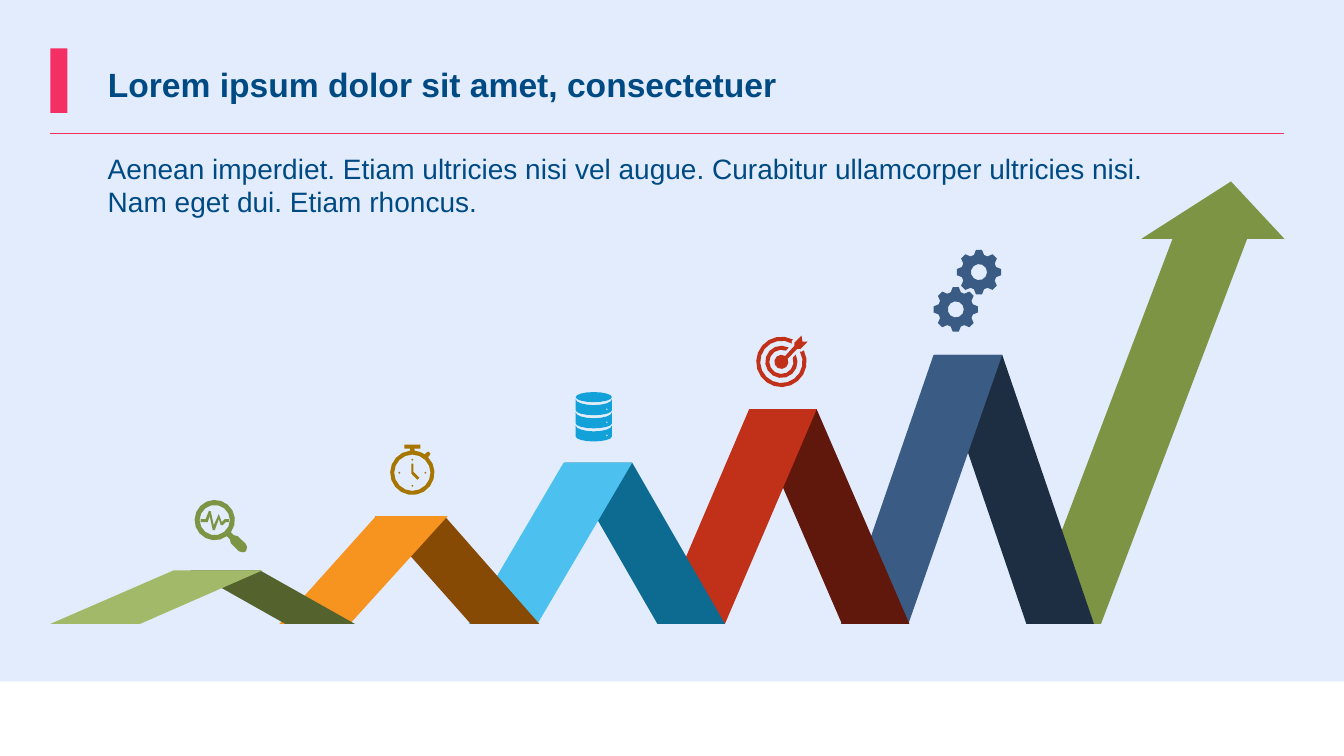
"""Builds a slide with a rising zigzag ribbon, five icons and a final arrow."""
from math import ceil, cos, radians, sin, sqrt

from pptx import Presentation
from pptx.dml.color import RGBColor
from pptx.enum.shapes import MSO_CONNECTOR, MSO_SHAPE
from pptx.enum.text import MSO_ANCHOR, MSO_AUTO_SIZE, PP_ALIGN
from pptx.oxml.xmlchemy import OxmlElement
from pptx.util import Inches, Pt

RECTANGLE = MSO_SHAPE.RECTANGLE
STRAIGHT = MSO_CONNECTOR.STRAIGHT
TOP = MSO_ANCHOR.TOP
GROW = MSO_AUTO_SIZE.SHAPE_TO_FIT_TEXT
LEFT = PP_ALIGN.LEFT

COLORS = {
    "background": "E2ECFD", "footer": "FFFFFF", "text": "004A84", "accent": "F42F63",
    "olive": "7E9445", "light olive": "A2B969", "dark olive": "54632E",
    "orange": "F7931F", "brown": "864A05", "gold": "A67600",
    "sky": "4CC1EF", "teal": "0D6B91", "cyan": "13A1D9",
    "red": "C13018", "maroon": "60180C",
    "blue": "3A5C84", "navy": "1D2E42",
}
BASE = 6.19

prs = Presentation()
prs.slide_width, prs.slide_height = Inches(13.33), Inches(7.5)
slide = prs.slides.add_slide(prs.slide_layouts[5])
shapes = slide.shapes
slide.background.fill.solid()
slide.background.fill.fore_color.rgb = RGBColor.from_string(COLORS["background"])


def arc(center, rx, ry, start, end):
    """Points along an elliptical arc; angles in degrees, clockwise from the right."""
    steps = ceil(abs(end - start) * sqrt(rx) / 10)
    angles = [radians(start + (end - start) * i / steps) for i in range(steps + 1)]
    return [(center[0] + rx * cos(a), center[1] + ry * sin(a)) for a in angles]


def add_outline(color, *contours):
    """Adds one filled freeform made of closed contours."""
    builder = None
    for contour in contours:
        points = [(Inches(x), Inches(y)) for x, y in contour]
        if builder is None:
            builder = shapes.build_freeform(*points[0])
        else:
            builder.move_to(*points[0])
        builder.add_line_segments(points[1:], close=True)
    outline = builder.convert_to_shape()
    outline.shadow.inherit = False
    outline.fill.solid()
    outline.fill.fore_color.rgb = RGBColor.from_string(COLORS[color])
    outline.line.fill.background()


for color, left, top, width, height in [
    ("footer", 0, 6.76, 13.33, 0.74),
    ("accent", 0.5, 0.48, 0.17, 0.64),
]:
    block = shapes.add_shape(RECTANGLE, Inches(left), Inches(top), Inches(width), Inches(height))
    block.shadow.inherit = False
    block.fill.solid()
    block.fill.fore_color.rgb = RGBColor.from_string(COLORS[color])
    block.line.fill.background()

title = shapes.title
title.left, title.top, title.width, title.height = Inches(0.97), Inches(0.58), Inches(9.48), Inches(0.5)
intro = shapes.add_textbox(Inches(0.97), Inches(1.45), Inches(10.55), Inches(0.77))
for holder, size, bold, lines in [
    (title, 24, True, ["Lorem ipsum dolor sit amet, consectetuer"]),
    (intro, 20, False, [
        "Aenean imperdiet. Etiam ultricies nisi vel augue. Curabitur ullamcorper ultricies nisi.",
        "Nam eget dui. Etiam rhoncus.",
    ]),
]:
    frame = holder.text_frame
    frame.word_wrap = True
    frame.auto_size = GROW
    frame.vertical_anchor = TOP
    for i, line in enumerate(lines):
        paragraph = frame.add_paragraph() if i else frame.paragraphs[0]
        paragraph.alignment = LEFT
        run = paragraph.add_run()
        run.text = line
        run.font.name = "Arial"
        run.font.size = Pt(size)
        run.font.bold = bold
        run.font.color.rgb = RGBColor.from_string(COLORS["text"])

add_outline("olive", [(12.21, 1.8), (12.74, 2.37), (12.37, 2.37), (10.92, BASE),
                      (10.18, BASE), (11.63, 2.37), (11.32, 2.37)])
for color, peak, top_left, top_right, base_right, base_left in [
    ("navy", 3.52, 9.27, 9.94, 10.85, 10.18),
    ("blue", 3.52, 9.26, 9.94, 9.01, 8.34),
    ("maroon", 4.06, 7.43, 8.1, 9.02, 8.35),
    ("red", 4.06, 7.43, 8.1, 7.19, 6.52),
    ("teal", 4.59, 5.6, 6.27, 7.19, 6.52),
    ("sky", 4.59, 5.59, 6.27, 5.33, 4.65),
    ("brown", 5.12, 3.72, 4.41, 5.35, 4.67),
    ("orange", 5.12, 3.73, 4.44, 3.47, 2.77),
    ("dark olive", 5.66, 1.89, 2.58, 3.52, 2.83),
    ("light olive", 5.66, 1.72, 2.6, 1.39, 0.5),
]:
    add_outline(color, [(top_left, peak), (top_right, peak), (base_right, BASE), (base_left, BASE)])

lens = (2.13, 5.16)
add_outline(
    "olive",
    [(2.36, 5.32), (2.32, 5.31), (2.29, 5.28), *arc(lens, 0.2, 0.2, 36, -307), (2.28, 5.35),
     (2.29, 5.39), (2.37, 5.47), (2.41, 5.48), (2.44, 5.47), (2.45, 5.43), (2.44, 5.4)],
    arc(lens, 0.15, 0.15, 0, 360),
)
add_outline("olive", [
    (2.27, 5.15), (2.23, 5.15), (2.2, 5.18), (2.17, 5.1), (2.12, 5.21), (2.09, 5.07),
    (2.07, 5.07), (2.04, 5.15), (1.99, 5.15), (1.99, 5.18), (2.06, 5.18), (2.08, 5.12),
    (2.11, 5.26), (2.13, 5.26), (2.17, 5.15), (2.19, 5.21), (2.21, 5.21), (2.24, 5.18), (2.27, 5.18),
])

dial = (4.09, 4.69)
for dx, dy in [(0, -0.13), (0, 0.13), (0.13, 0), (-0.13, 0)]:
    add_outline("gold", arc((dial[0] + dx, dial[1] + dy), 0.01, 0.01, 0, 360))
add_outline("gold", [(4.1, 4.6), (4.08, 4.6), (4.08, 4.7), (4.14, 4.76), (4.16, 4.74), (4.1, 4.68)])
add_outline(
    "gold",
    [(4.26, 4.52), (4.27, 4.5), (4.25, 4.48), (4.23, 4.49), *arc(dial, 0.22, 0.22, -56, -84),
     (4.11, 4.45), (4.17, 4.45), (4.17, 4.41), (4.01, 4.41), (4.01, 4.45), (4.07, 4.45),
     *arc(dial, 0.22, 0.22, -96, -405)],
    arc(dial, 0.18, 0.18, 0, 360),
)

add_outline("cyan", arc((5.89, 3.94), 0.18, 0.05, 0, 360))
for drum in range(3):
    rim = 3.96 + 0.13 * drum
    add_outline(
        "cyan",
        arc((5.89, rim), 0.18, 0.06, 180, 0) + arc((5.89, rim + 0.11), 0.18, 0.05, 0, 180),
        arc((6.02, rim + 0.1), 0.01, 0.01, 0, 360),
    )

bullseye = (7.75, 3.59)
add_outline("red", [(7.96, 3.39), (7.95, 3.33), (7.88, 3.4), (7.88, 3.43),
                    *arc(bullseye, 0.07, 0.07, -57, -387), (7.91, 3.46), (7.94, 3.46), (8.01, 3.39)])
add_outline("red", arc(bullseye, 0.25, 0.25, -27, 297) + [(7.85, 3.39)]
            + arc(bullseye, 0.21, 0.21, 300, -29) + [(7.95, 3.49)])
add_outline("red", arc(bullseye, 0.16, 0.16, -27, 297) + arc(bullseye, 0.12, 0.12, 292, -20))

tooth = [(0.17, -0.05), (0.22, -0.03), (0.22, 0.03), (0.17, 0.05)]
turns = [radians(45 * i) for i in range(8)]
for x, y in [(9.71, 2.7), (9.48, 3.07)]:
    teeth = [(x + dx * cos(t) - dy * sin(t), y + dx * sin(t) + dy * cos(t))
             for t in turns for dx, dy in tooth]
    add_outline("blue", teeth, arc((x, y), 0.08, 0.08, 0, 360))

divider = shapes.add_connector(STRAIGHT, Inches(0.5), Inches(1.32), Inches(12.74), Inches(1.32))
divider.line.width = Pt(0.5)
divider.line.color.rgb = RGBColor.from_string(COLORS["accent"])
divider.element.spPr.append(OxmlElement("a:effectLst"))

prs.save("out.pptx")
